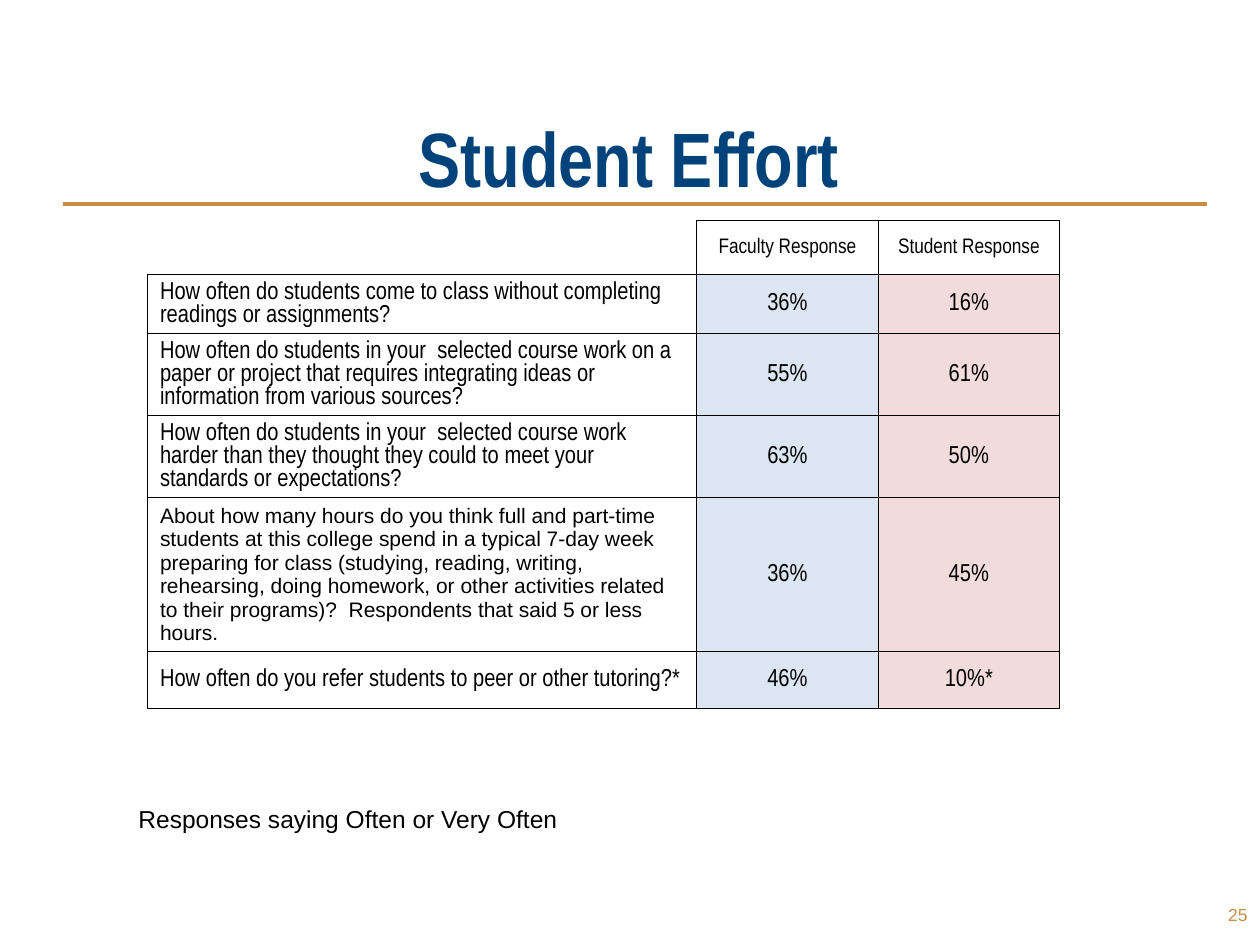
from pptx import Presentation, oxml, util as u
from pptx.dml import color
from pptx.enum import shapes, text
from pptx.oxml import ns

Inches = u.Inches
COLORS = {"navy": "00427A", "gold": "C78E44", "black": "000000",
          "white": "FFFFFF", "faculty": "DCE6F2", "student": "F2DCDB"}
LEFT, CENTER, RIGHT = text.PP_ALIGN.LEFT, text.PP_ALIGN.CENTER, text.PP_ALIGN.RIGHT
MIDDLE = text.MSO_ANCHOR.MIDDLE


def write(frame, words, size=14, font="Arial", ink="black", bold=False, align=LEFT):
    para = frame.paragraphs[0]
    para.alignment = align
    span = para.add_run()
    span.text = words
    span.font.name, span.font.size, span.font.bold = font, u.Pt(size), bold
    span.font.color.rgb = color.RGBColor.from_string(COLORS[ink])
    return para


def set_border(cell, side, visible):
    fill = f'<a:solidFill><a:srgbClr val="{COLORS["black"]}"/></a:solidFill>'
    edge = oxml.parse_xml(f'<a:ln{side} {ns.nsdecls("a")} w="{int(u.Pt(0.5))}">'
                          f'{fill if visible else "<a:noFill/>"}</a:ln{side}>')
    cell._tc.get_or_add_tcPr().append(edge)


deck = Presentation()
deck.slide_width, deck.slide_height = Inches(10), Inches(7.5)
page = deck.slides.add_slide(deck.slide_layouts[5])

# Title
title = page.shapes.title
title.left, title.top = Inches(0.33), Inches(0.53)
title.width, title.height = Inches(9.33), Inches(1.13)
title.text_frame.vertical_anchor = text.MSO_ANCHOR.BOTTOM
title.text_frame.auto_size = text.MSO_AUTO_SIZE.NONE
heading = write(title.text_frame, "Student Effort", size=44, font="Arial Narrow",
                ink="navy", bold=True, align=CENTER)
heading.line_spacing = u.Pt(44)

# Rule under the title
rule = page.shapes.add_connector(shapes.MSO_CONNECTOR.STRAIGHT, Inches(0.5),
                                 Inches(1.62), Inches(9.58), Inches(1.62))
rule.line.color.rgb = color.RGBColor.from_string(COLORS["gold"])
rule.line.width = u.Pt(2.25)
rule._element.spPr.append(oxml.parse_xml(f'<a:effectLst {ns.nsdecls("a")}/>'))

# Response table: row height, question, faculty, student
ROWS = [
    (0.43, "", "Faculty Response", "Student Response"),
    (0.47, "How often do students come to class without completing readings "
           "or assignments?", "36%", "16%"),
    (0.65, "How often do students in your  selected course work on a paper or project "
           "that requires integrating ideas or information from various sources?",
     "55%", "61%"),
    (0.65, "How often do students in your  selected course work harder than they "
           "thought they could to meet your standards or expectations?", "63%", "50%"),
    (1.22, "About how many hours do you think full and part-time students at this "
           "college spend in a typical 7-day week preparing for class (studying, "
           "reading, writing, rehearsing, doing homework, or other activities related "
           "to their programs)?  Respondents that said 5 or less hours.", "36%", "45%"),
    (0.45, "How often do you refer students to peer or other tutoring?*", "46%", "10%*"),
]
WIDTHS = [4.36, 1.44, 1.44]
HOURS_ROW = 4
table = page.shapes.add_table(len(ROWS), len(WIDTHS), Inches(1.17), Inches(1.75),
                              Inches(sum(WIDTHS)),
                              Inches(sum(row[0] for row in ROWS))).table
table.first_row = table.horz_banding = False
for column, width in zip(table.columns, WIDTHS):
    column.width = Inches(width)

for r, (height, *entries) in enumerate(ROWS):
    table.rows[r].height = Inches(height)
    for c, words in enumerate(entries):
        cell = table.cell(r, c)
        cell.vertical_anchor = MIDDLE
        is_corner = r == 0 and c == 0
        for side in "LRTB":
            set_border(cell, side, visible=not (is_corner and side in "LT"))
        shade = "white" if r == 0 else ("white", "faculty", "student")[c]
        cell.fill.solid()
        cell.fill.fore_color.rgb = color.RGBColor.from_string(COLORS[shade])
        if words:
            is_hours = r == HOURS_ROW and c == 0
            write(cell.text_frame, words, size=12 if r == 0 or is_hours else 14,
                  font="Arial" if is_hours else "Arial Narrow",
                  align=CENTER if c else LEFT)

# Note below the table
note = page.shapes.add_textbox(Inches(1), Inches(6.33), Inches(5.75), Inches(0.34))
note.text_frame.word_wrap = True
note.text_frame.auto_size = text.MSO_AUTO_SIZE.SHAPE_TO_FIT_TEXT
write(note.text_frame, "Responses saying Often or Very Often")

# Page number
number = page.shapes.add_textbox(Inches(9.33), Inches(7.08), Inches(0.67), Inches(0.35))
number.text_frame.word_wrap = True
number.text_frame.vertical_anchor = MIDDLE
write(number.text_frame, "25", size=10, ink="gold", align=RIGHT)

deck.save("out.pptx")
